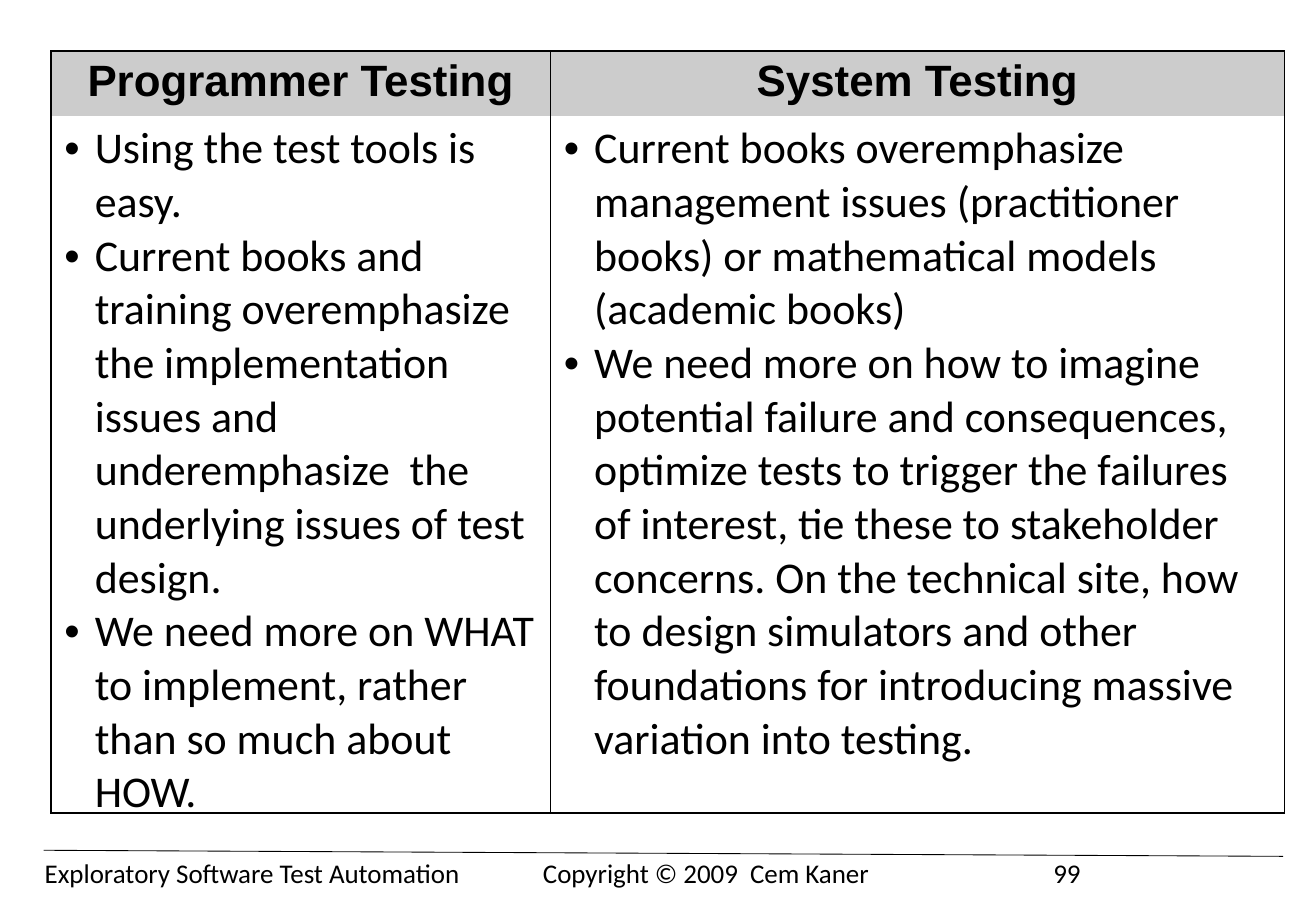
from lxml.etree import SubElement
from pptx import Presentation
from pptx.dml.color import RGBColor
from pptx.enum.shapes import MSO_CONNECTOR
from pptx.enum.text import PP_ALIGN
from pptx.oxml.ns import qn
from pptx.util import Pt

PX = 9144  # 100 px to the inch
HUES = {"ink": "000000", "head": "CCCCCC", "body": "FFFFFF"}


def px(num):
    return num * PX


def hue(name):
    return RGBColor.from_string(HUES[name])


def write(frame, lines, size=26, font="Calibri", bold=False,
          align=PP_ALIGN.LEFT, bullet=False, tabs=()):
    for i, line in enumerate(lines):
        para = frame.paragraphs[0] if i == 0 else frame.add_paragraph()
        para.alignment = align
        props = para._p.get_or_add_pPr()
        if bullet:
            props.set("marL", str(px(25)))
            props.set("indent", str(px(-25)))
            SubElement(props, qn("a:buFont"), typeface="Arial")
            SubElement(props, qn("a:buChar"), char="•")
        if tabs:
            stops = SubElement(props, qn("a:tabLst"))
            for tab in tabs:
                SubElement(stops, qn("a:tab"), pos=str(px(tab)), algn="l")
        run = para.add_run()
        run.text = line
        run.font.size = Pt(size)
        run.font.name = font
        run.font.bold = bold
        run.font.color.rgb = hue("ink")


class Deck:
    def __init__(self, wide, high):
        self.prs = Presentation()
        self.prs.slide_width, self.prs.slide_height = px(wide), px(high)
        self.slide = self.prs.slides.add_slide(self.prs.slide_layouts[6])

    def text(self, left, top, wide, high, line, **style):
        box = self.slide.shapes.add_textbox(px(left), px(top), px(wide), px(high))
        box.text_frame.word_wrap = True
        write(box.text_frame, [line], **style)

    def line(self, x1, y1, x2, y2, width):
        rule = self.slide.shapes.add_connector(
            MSO_CONNECTOR.STRAIGHT, px(x1), px(y1), px(x2), px(y2))
        rule.line.color.rgb = hue("ink")
        rule.line.width = Pt(width)
        SubElement(rule._element.spPr, qn("a:effectLst"))

    def edge(self, cell, sides):
        props = cell._tc.get_or_add_tcPr()
        for side in "LRTB":
            line = SubElement(props, qn("a:ln" + side), w=str(Pt(1)))
            if side in sides:
                fill = SubElement(line, qn("a:solidFill"))
                SubElement(fill, qn("a:srgbClr"), val=HUES["ink"])
            else:
                SubElement(line, qn("a:noFill"))

    def cell(self, cell, lines, fill, sides, foot, **style):
        cell.margin_left = cell.margin_right = px(11)
        cell.margin_top, cell.margin_bottom = px(5), px(foot)
        self.edge(cell, sides)
        cell.fill.solid()
        cell.fill.fore_color.rgb = hue(fill)
        write(cell.text_frame, lines, **style)

    def table(self, left, top, cols, rows, data):
        grid = self.slide.shapes.add_table(
            len(rows), len(cols), px(left), px(top),
            px(sum(cols)), px(sum(rows))).table
        grid.first_row = grid.horz_banding = False
        for row, high in zip(grid.rows, rows):
            row.height = px(high)
        for i, (wide, (head, points)) in enumerate(zip(cols, data)):
            grid.columns[i].width = px(wide)
            self.cell(grid.cell(0, i), [head], "head", "LRT", 5,
                      font="Arial", bold=True, align=PP_ALIGN.CENTER)
            self.cell(grid.cell(1, i), points, "body", "LRB", 0, bullet=True)


DATA = [
    ("Programmer Testing", [
        "Using the test tools is easy.",
        "Current books and training overemphasize the implementation issues "
        "and underemphasize  the underlying issues of test design.",
        "We need more on WHAT to implement, rather than so much about HOW.",
    ]),
    ("System Testing", [
        "Current books overemphasize management issues (practitioner books) "
        "or mathematical models (academic books)",
        "We need more on how to imagine potential failure and consequences, "
        "optimize tests to trigger the failures of interest, tie these to "
        "stakeholder concerns. On the technical site, how to design simulators "
        "and other foundations for introducing massive variation into testing.",
    ]),
]


def main():
    deck = Deck(1083, 750)
    # Footer
    deck.text(27, 700, 1024, 37,
              "Exploratory Software Test Automation\t"
              "Copyright © 2009  Cem Kaner\t99", size=16, tabs=(410, 830))
    deck.line(36, 700, 1056, 705, 0.5)
    # Comparison table
    deck.table(42, 42, (411, 604), (53, 574), DATA)
    deck.prs.save("out.pptx")


if __name__ == "__main__":
    main()
